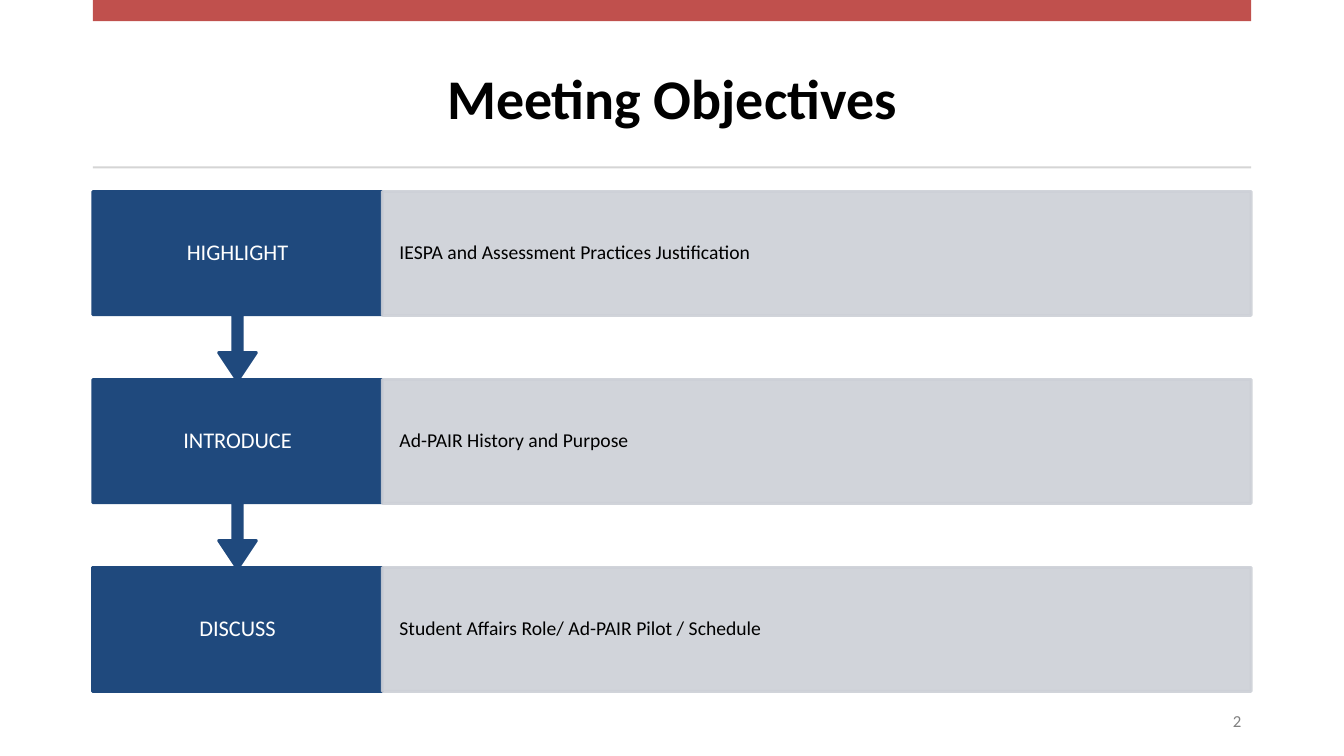
from pptx import Presentation
from pptx.dml.color import RGBColor as RGB
from pptx.enum.shapes import MSO_SHAPE as Shape
from pptx.enum.text import MSO_ANCHOR as Anchor, PP_ALIGN as Align
from pptx.oxml.ns import qn
from pptx.util import Inches, Pt
from lxml.etree import SubElement

# Content
TITLE = "Meeting Objectives"
PAGE = "2"
STEPS = [
    ("HIGHLIGHT", "IESPA and Assessment Practices Justification"),
    ("INTRODUCE", "Ad-PAIR History and Purpose"),
    ("DISCUSS", "Student Affairs Role/ Ad-PAIR Pilot / Schedule"),
]
COLORS = {"bar": "C0504D", "rule": "D5D5D5", "step": "1F497D", "detail": "CDD0D7",
          "white": "FFFFFF", "black": "000000", "page": "808080"}

# Layout in inches
LEFT, WIDTH = 0.92, 11.49
TOP, PITCH, BOX = 1.9, 1.865, 1.23
STEP_W = WIDTH / 4
CALLOUT = 1.88
ARROW = (0.05, 0.1, 0.15, 0.65)


def color(name):
    return RGB.from_string(COLORS[name])


def write(shape, text, size, ink, align, pad=(0.1, 0.05), bold=False):
    frame = shape.text_frame
    frame.word_wrap = True
    frame.vertical_anchor = Anchor.MIDDLE
    frame.margin_left = frame.margin_right = Inches(pad[0])
    frame.margin_top = frame.margin_bottom = Inches(pad[1])
    frame.text = text
    para = frame.paragraphs[0]
    para.alignment = align
    font = para.font
    font.name, font.size, font.bold = "Calibri", Pt(size), bold
    font.color.rgb = color(ink)
    return para


def block(kind, x, y, w, h, fill, border=False):
    shape = slide.shapes.add_shape(kind, Inches(x), Inches(y), Inches(w), Inches(h))
    shape.shadow.inherit = False
    shape.fill.solid()
    shape.fill.fore_color.rgb = color(fill)
    if border:
        shape.line.color.rgb = color(fill)
        shape.line.width = Pt(2)
    else:
        shape.line.fill.background()
    return shape


def fade(shape, share):
    for tint in shape._element.spPr.iter(qn("a:srgbClr")):
        SubElement(tint, qn("a:alpha")).set("val", str(share * 1000))


deck = Presentation()
deck.slide_width, deck.slide_height = Inches(13.33), Inches(7.5)
slide = deck.slides.add_slide(deck.slide_layouts[5])

# Title, top bar and rule
title = slide.shapes.title
title.left, title.top = Inches(LEFT), Inches(0.37)
title.width, title.height = Inches(WIDTH), Inches(1.18)
write(title, TITLE, 40, "black", Align.CENTER, bold=True)
block(Shape.RECTANGLE, LEFT, 0, WIDTH, 0.21, "bar")
block(Shape.RECTANGLE, LEFT, 1.65, WIDTH, 0.02, "rule")

# Page number
page = slide.shapes.add_textbox(Inches(9.53), Inches(6.95), Inches(2.88), Inches(0.4))
write(page, PAGE, 12, "page", Align.RIGHT)

# Steps from the bottom up, so that each arrow lies over the next step
for row, (verb, detail) in reversed(list(enumerate(STEPS))):
    y = TOP + row * PITCH
    if row == len(STEPS) - 1:
        step = block(Shape.RECTANGLE, LEFT, y, STEP_W, BOX, "step", True)
    else:
        step = block(Shape.DOWN_ARROW_CALLOUT, LEFT, y, STEP_W, CALLOUT, "step", True)
        for i, value in enumerate(ARROW):
            step.adjustments[i] = value
    write(step, verb, 16, "white", Align.CENTER, (0.2, 0.12)).line_spacing = 0.9

    panel = block(Shape.RECTANGLE, LEFT + STEP_W, y, WIDTH - STEP_W, BOX, "detail", True)
    fade(panel, 90)
    write(panel, detail, 14, "black", Align.LEFT, (0.17, 0.19)).line_spacing = 0.9

deck.save("out.pptx")
